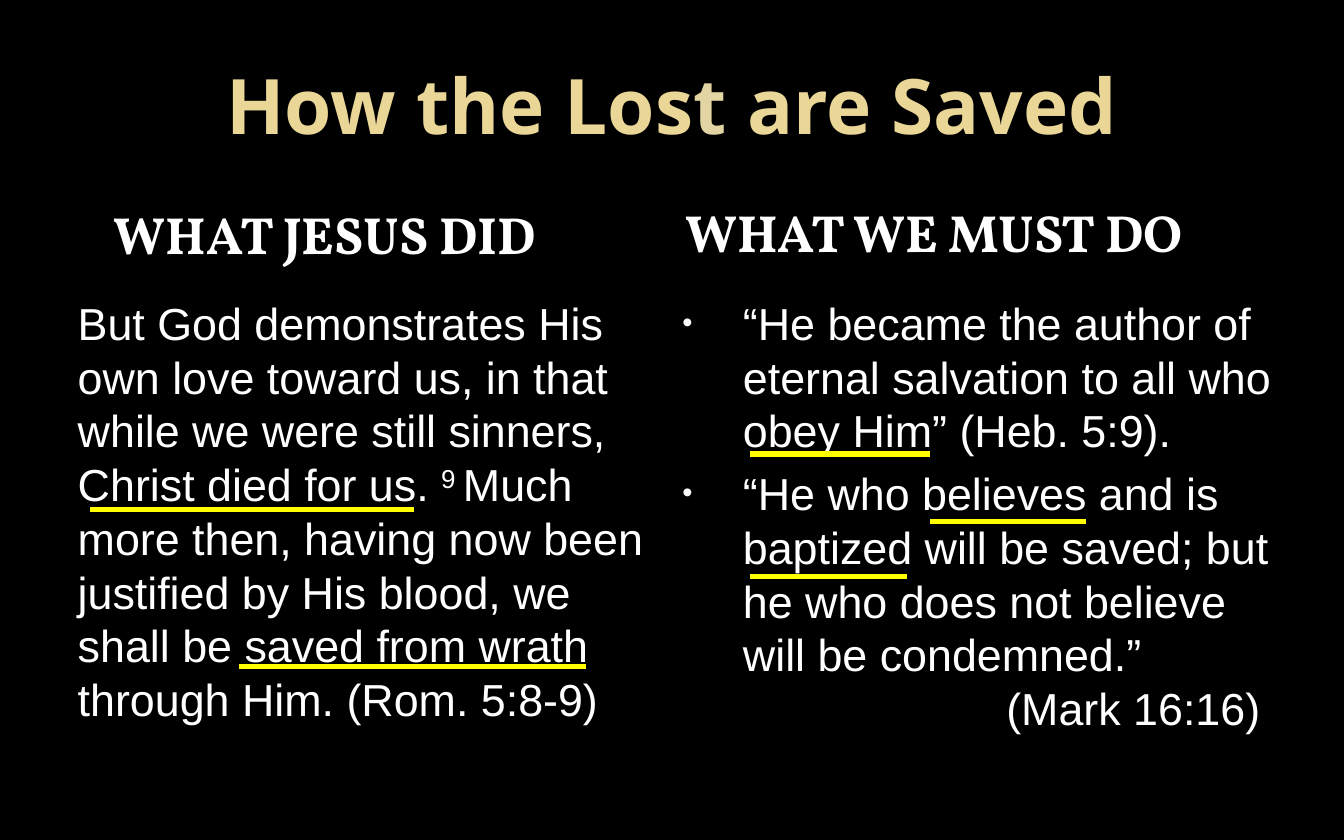
from pptx import Presentation
from pptx.dml.color import RGBColor
from pptx.enum.shapes import MSO_CONNECTOR
from pptx.enum.text import MSO_ANCHOR, MSO_AUTO_SIZE, PP_ALIGN
from pptx.oxml.ns import qn
from pptx.util import Inches, Pt
from lxml.etree import SubElement

BLACK, WHITE, GOLD, PALE_GOLD, YELLOW = "000000", "FFFFFF", "EAD696", "E2D5A3", "FFFF00"

HEADINGS = [
    ("WHAT JESUS DID", (0.75, 1.4, 4.17, 0.68)),
    ("WHAT WE MUST DO", (5, 1.38, 4.42, 0.68)),
]
UNDERLINES = [
    (5.58, 6.92, 3.38),
    (6.92, 8.08, 3.88),
    (0.67, 3.08, 3.79),
    (1.78, 4.36, 4.96),
    (5.58, 6.75, 4.29),
]


def color(value):
    return RGBColor.from_string(value)


def format_run(r, font, size, fill, bold=False):
    r.font.name = font
    r.font.size = Pt(size)
    r.font.bold = bold
    r.font.color.rgb = color(fill)


def add_text_box(slide, box):
    sp = slide.shapes.add_textbox(*map(Inches, box))
    sp.text_frame.word_wrap = True
    return sp.text_frame


def add_title(slide, box):
    sp = slide.shapes.title
    sp.left, sp.top, sp.width, sp.height = map(Inches, box)
    tf = sp.text_frame
    tf.auto_size = MSO_AUTO_SIZE.NONE
    tf.vertical_anchor = MSO_ANCHOR.MIDDLE
    p = tf.paragraphs[0]
    p.alignment = PP_ALIGN.CENTER
    for text, fill in [("How the Los", GOLD), ("t", PALE_GOLD), (" are Saved", GOLD)]:
        r = p.add_run()
        r.text = text
        format_run(r, "Open Sans", 41, fill, True)


def add_heading(slide, text, box):
    tf = add_text_box(slide, box)
    tf.vertical_anchor = MSO_ANCHOR.MIDDLE
    tf.text = text
    format_run(tf.paragraphs[0].runs[0], "Vollkorn", 28, WHITE, True)


def format_body(p, left, hanging=0, before=4.8):
    p.line_spacing = Pt(28.8)
    p.space_before = Pt(before)
    pPr = p._p.get_or_add_pPr()
    pPr.set("marL", str(Inches(left)))
    pPr.set("indent", str(-Inches(hanging)))
    for r in p.runs:
        format_run(r, "Arial", 24, WHITE)


def add_bullet(p):
    pPr = p._p.get_or_add_pPr()
    SubElement(SubElement(pPr, qn("a:buClr")), qn("a:srgbClr"), val="F9F9F9")
    SubElement(pPr, qn("a:buSzPct"), val="65000")
    SubElement(pPr, qn("a:buFont"), typeface="Arial")
    SubElement(pPr, qn("a:buChar"), char="•")


def add_passage(slide, box):
    p = add_text_box(slide, box).paragraphs[0]
    for text in (
        "But God demonstrates His own love toward us, in that while we were "
        "still sinners, Christ died for us. ",
        "9 ",
        "Much more then, having now been justified by His blood, we shall be "
        "saved from wrath through Him. (Rom. 5:8-9)",
    ):
        p.add_run().text = text
    format_body(p, 0.15)
    p.runs[1].font._element.set("baseline", "30000")


def add_requirements(slide, box):
    tf = add_text_box(slide, box)
    tf.text = (
        "“He became the author of eternal salvation to all who obey Him” (Heb. 5:9).\n"
        "“He who believes and is baptized will be saved; but he who does not "
        "believe will be condemned.”\n"
        "(Mark 16:16)"
    )
    *quotes, reference = tf.paragraphs
    for p in quotes:
        format_body(p, 0.6, 0.45)
        add_bullet(p)
    format_body(reference, 2.56, before=0)


def add_underline(slide, x1, x2, y):
    line = slide.shapes.add_connector(
        MSO_CONNECTOR.STRAIGHT, Inches(x1), Inches(y), Inches(x2), Inches(y))
    line.line.color.rgb = color(YELLOW)
    line.line.width = Pt(3)
    SubElement(line._element.spPr, qn("a:effectLst"))


def main():
    prs = Presentation()
    prs.slide_width, prs.slide_height = Inches(10), Inches(6.25)
    slide = prs.slides.add_slide(prs.slide_layouts[5])
    slide.background.fill.solid()
    slide.background.fill.fore_color.rgb = color(BLACK)
    add_title(slide, (0.5, 0.25, 9, 1.04))
    for text, box in HEADINGS:
        add_heading(slide, text, box)
    add_passage(slide, (0.33, 2.15, 4.59, 3.43))
    add_requirements(slide, (4.83, 2.15, 4.83, 3.43))
    for x1, x2, y in UNDERLINES:
        add_underline(slide, x1, x2, y)
    prs.save("out.pptx")


if __name__ == "__main__":
    main()
